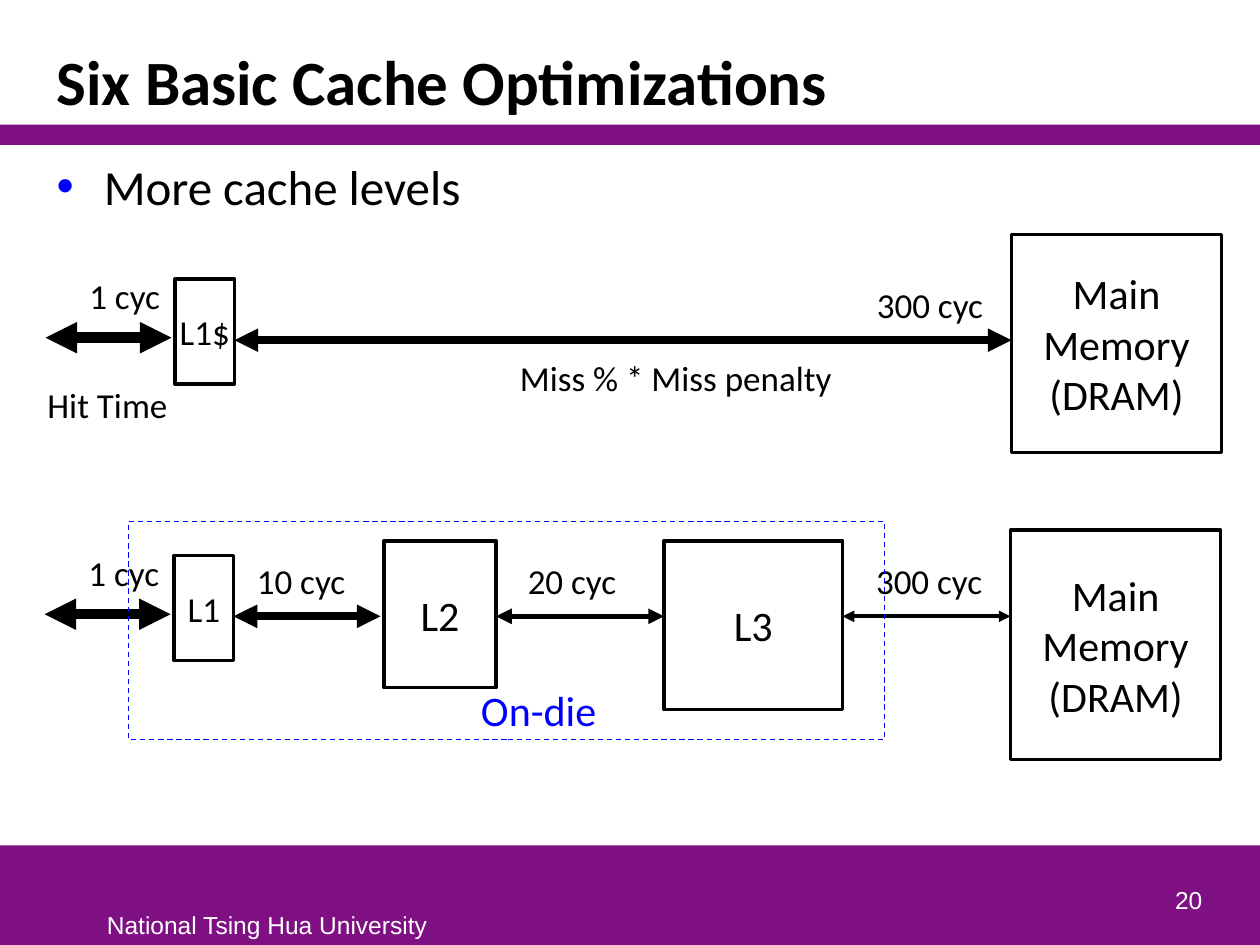
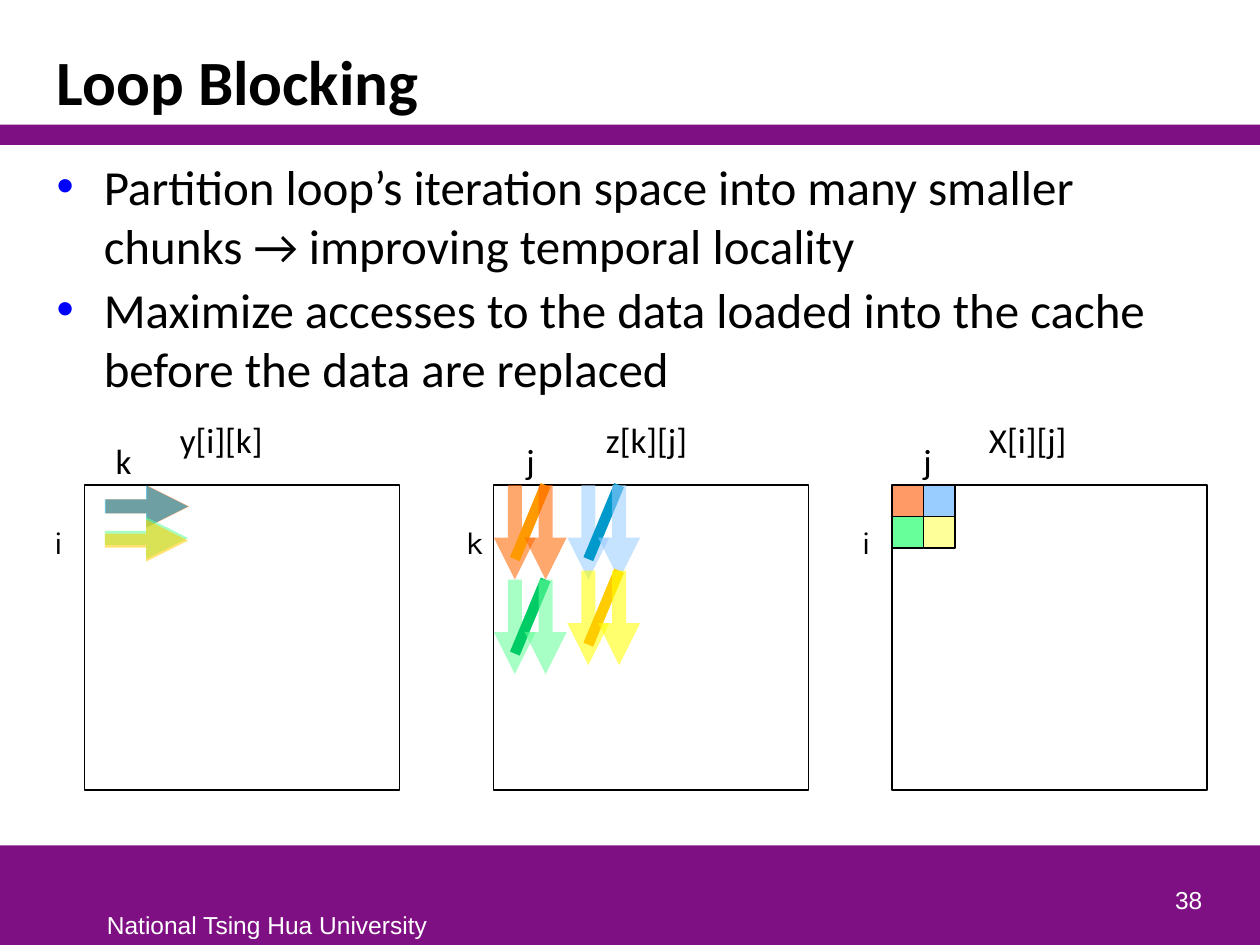
"""Builds two slides on cache optimization: more cache levels and loop blocking."""
from lxml import etree
from pptx import Presentation
from pptx.dml.color import RGBColor
from pptx.enum.dml import MSO_LINE
from pptx.enum.shapes import MSO_CONNECTOR, MSO_SHAPE
from pptx.enum.text import MSO_ANCHOR, MSO_AUTO_SIZE, PP_ALIGN
from pptx.oxml.ns import qn
from pptx.util import Pt

RECT, STRAIGHT, DASH = MSO_SHAPE.RECTANGLE, MSO_CONNECTOR.STRAIGHT, MSO_LINE.DASH
LEFT, CENTER, RIGHT = PP_ALIGN.LEFT, PP_ALIGN.CENTER, PP_ALIGN.RIGHT
TOP, MIDDLE, BOTTOM = MSO_ANCHOR.TOP, MSO_ANCHOR.MIDDLE, MSO_ANCHOR.BOTTOM

BLACK = RGBColor(0x00, 0x00, 0x00)
WHITE = RGBColor(0xFF, 0xFF, 0xFF)
PURPLE = RGBColor(0x7F, 0x10, 0x84)
BLUE = RGBColor(0x00, 0x00, 0xFF)
ORANGE = RGBColor(0xFF, 0x66, 0x00)
AMBER = RGBColor(0xFF, 0x99, 0x00)
SALMON = RGBColor(0xFF, 0x99, 0x66)
SKY = RGBColor(0x99, 0xCC, 0xFF)
TEAL = RGBColor(0x00, 0x99, 0xCC)
MINT = RGBColor(0x66, 0xFF, 0x99)
GREEN = RGBColor(0x00, 0xCC, 0x66)
YELLOW = RGBColor(0xFF, 0xFF, 0x00)
GOLD = RGBColor(0xFF, 0xCC, 0x00)
CREAM = RGBColor(0xFF, 0xFF, 0x99)

BODY_FONT, FOOTER_FONT, INDEX_FONT = "Calibri", "Arial", "Karla"
FOOTER = "National Tsing Hua University"
BANDS = [(0, 483.1, 720, 56.9), (0, 71.3, 720, 11.5)]

LEVELS = {
    "title": "Six Basic Cache Optimizations",
    "number": "20",
    "bullets": ["More cache levels"],
    "boxes": [
        ("Main\nMemory\n(DRAM)", 24, 578, 134, 120, 124.5, 2),
        ("L1$", 20, 100, 159.5, 34, 60, 2),
        ("Main Memory (DRAM)", 24, 577.5, 303, 120, 131, 2),
        ("L2", 24, 219.5, 309, 64, 84, 2),
        ("L1", 20, 99.5, 317.5, 34, 60, 2),
        ("L3", 24, 379.5, 309, 102, 96.5, 2.25),
    ],
    "arrows": [
        (26, 98, 193, 6), (134, 578, 194.4, 4.5),
        (25.5, 97.5, 351, 6), (133.5, 217.5, 352.2, 4.5),
        (283.5, 379.5, 352.2, 3), (481.5, 577.5, 352.2, 2.25),
    ],
    "labels": [
        ("Hit Time", 20, 215.5, 84), ("Miss % * Miss penalty", 290, 200.2, 194.5),
        ("1 cyc", 44, 153.4, 55.5), ("300 cyc", 494, 158.4, 75.5),
        ("1 cyc", 43.5, 311.5, 55.5), ("300 cyc", 493.5, 316, 75.5),
        ("20 cyc", 294.5, 316, 65.5), ("10 cyc", 139.7, 316, 65.5),
    ],
    "die": ("On-die", 267.8, 387.4, 81.4),
    "die_area": (73.5, 298, 432, 124.5),
}

BLOCKING = {
    "title": "Loop Blocking",
    "number": "38",
    "bullets": [
        "Partition loop’s iteration space into many smaller chunks → improving temporal locality",
        "Maximize accesses to the data loaded into the cache before the data are replaced",
    ],
    "matrices": [
        (48.2, ("y[i][k]", 47.5, 62), ("k", 10.8, 24.5), ("i", -24.5, 19.5)),
        (282.2, ("z[k][j]", 57, 61), ("j", 11.5, 19.5), ("k", -23, 24.5)),
        (509.8, ("X[i][j]", 48.2, 59), ("j", 10.8, 19.5), ("i", -24.5, 19.5)),
    ],
    "row_sweeps": [(ORANGE, 60.5, 289.4), (TEAL, 60, 289.4), (MINT, 60, 307.4), (GOLD, 60, 308.9)],
    "column_sweeps": [
        (ORANGE, AMBER, 294.2, 277.2), (SKY, TEAL, 336.2, 277.2),
        (MINT, GREEN, 294.2, 331.2), (YELLOW, GOLD, 336.2, 326.1),
    ],
    "blocks": [[SALMON, SKY], [MINT, CREAM]],
}
MATRIX_TOP, MATRIX_W, MATRIX_H, BLOCK = 277.2, 180, 174.3, 18
SWEEP, COLUMN_STEP, RETURN_DROP = 54, 17.6, 42.3


def write(tf, text, size, color=BLACK, font=BODY_FONT, align=LEFT, anchor=TOP, bold=False):
    tf.vertical_anchor = anchor
    for i, line in enumerate(text.split("\n")):
        p = tf.add_paragraph() if i else tf.paragraphs[0]
        p.alignment = align
        r = p.add_run()
        r.text = line
        r.font.size, r.font.name, r.font.bold = Pt(size), font, bold
        r.font.color.rgb = color


def add_label(s, text, x, y, w, h=31.5, size=20, wrap=False, **style):
    tf = s.shapes.add_textbox(Pt(x), Pt(y), Pt(w), Pt(h)).text_frame
    tf.word_wrap = wrap
    write(tf, text, size, **style)
    return tf


def add_rect(s, x, y, w, h, fill=None, line=None, width=0.75):
    sp = s.shapes.add_shape(RECT, Pt(x), Pt(y), Pt(w), Pt(h))
    sp.shadow.inherit = False
    if fill is None:
        sp.fill.background()
    else:
        sp.fill.solid()
        sp.fill.fore_color.rgb = fill
    if line is None:
        sp.line.fill.background()
    else:
        sp.line.color.rgb, sp.line.width = line, Pt(width)
    return sp


def add_line(s, x1, y1, x2, y2, color, width, ends=(), alpha=None):
    c = s.shapes.add_connector(STRAIGHT, Pt(x1), Pt(y1), Pt(x2), Pt(y2))
    c.line.color.rgb, c.line.width = color, Pt(width)
    spPr = c.element.spPr
    ln = spPr.find(qn("a:ln"))
    if alpha:
        clr = ln.find(".//" + qn("a:srgbClr"))
        etree.SubElement(clr, qn("a:alpha"), val=str(alpha * 1000))
    for end in ends:
        etree.SubElement(ln, qn("a:" + end), type="triangle")
    etree.SubElement(spPr, qn("a:effectLst"))


def add_bullets(s, items):
    tf = s.shapes.add_textbox(Pt(25.2), Pt(85.8), Pt(669), Pt(393.5)).text_frame
    tf.word_wrap = True
    write(tf, "\n".join(items), 28)
    for i, p in enumerate(tf.paragraphs):
        p.space_before = Pt(3 if i else 0)
        pPr = p._p.get_or_add_pPr()
        pPr.set("marL", str(Pt(27)))
        pPr.set("indent", str(-Pt(27)))
        clr = etree.SubElement(pPr, qn("a:buClr"))
        etree.SubElement(clr, qn("a:srgbClr"), val=str(BLUE))
        etree.SubElement(pPr, qn("a:buFont"), typeface=FOOTER_FONT)
        etree.SubElement(pPr, qn("a:buChar"), char="•")


def add_slide(prs, content):
    s = prs.slides.add_slide(prs.slide_layouts[5])
    for band in BANDS:
        add_rect(s, *band, fill=PURPLE)
    add_label(s, FOOTER, 54, 516.2, 199, 24, size=14, color=WHITE, font=FOOTER_FONT)
    add_label(s, content["number"], 544.3, 490.3, 149.8, 36, size=14, wrap=True,
              color=WHITE, font=FOOTER_FONT, align=RIGHT, anchor=BOTTOM)
    title = s.shapes.title
    title.left, title.top, title.width, title.height = Pt(25.2), Pt(18), Pt(669), Pt(53.3)
    tf = title.text_frame
    tf.auto_size = MSO_AUTO_SIZE.NONE
    write(tf, content["title"], 36, anchor=BOTTOM, bold=True)
    tf.paragraphs[0].line_spacing = 0.85
    add_bullets(s, content["bullets"])
    return s


def build_levels(prs):
    s = add_slide(prs, LEVELS)
    for text, size, x, y, w, h, width in LEVELS["boxes"]:
        tf = add_rect(s, x, y, w, h, line=BLACK, width=width).text_frame
        tf.margin_left = tf.margin_right = tf.margin_top = tf.margin_bottom = 0
        tf.word_wrap = True
        write(tf, text, size, align=CENTER, anchor=MIDDLE)
    for x1, x2, y, width in LEVELS["arrows"]:
        add_line(s, x1, y, x2, y, BLACK, width, ("headEnd", "tailEnd"))
    for label in LEVELS["labels"]:
        add_label(s, *label)
    add_rect(s, *LEVELS["die_area"], line=BLUE).line.dash_style = DASH
    add_label(s, *LEVELS["die"], h=36, size=24, color=BLUE)


def build_blocking(prs):
    s = add_slide(prs, BLOCKING)
    for x, (name, name_dx, name_w), (col, col_dx, col_w), (row, row_dx, row_w) in BLOCKING["matrices"]:
        add_rect(s, x, MATRIX_TOP, MATRIX_W, MATRIX_H, WHITE, BLACK)
        add_label(s, name, x + name_dx, MATRIX_TOP - 41.8, name_w)
        add_label(s, col, x + col_dx, MATRIX_TOP - 29.5, col_w)
        add_label(s, row, x + row_dx, MATRIX_TOP + 18, row_w, 29, size=18, font=INDEX_FONT)
    for color, x, y in BLOCKING["row_sweeps"]:
        add_line(s, x, y, x + 47.5, y, color, 8, ("tailEnd",), 56)
    for color, back, x, y in BLOCKING["column_sweeps"]:
        x2 = x + COLUMN_STEP
        add_line(s, x, y, x, y + SWEEP, color, 8, ("tailEnd",), 56)
        add_line(s, x, y + RETURN_DROP, x2, y, back, 6)
        add_line(s, x2, y, x2, y + SWEEP, color, 8, ("tailEnd",), 56)
    left = BLOCKING["matrices"][-1][0]
    for i, colors in enumerate(BLOCKING["blocks"]):
        for j, color in enumerate(colors):
            add_rect(s, left + j * BLOCK, MATRIX_TOP + i * BLOCK, BLOCK, BLOCK, color, BLACK)


def main():
    prs = Presentation()
    prs.slide_width, prs.slide_height = Pt(720), Pt(540)
    build_levels(prs)
    build_blocking(prs)
    prs.save("out.pptx")


if __name__ == "__main__":
    main()
